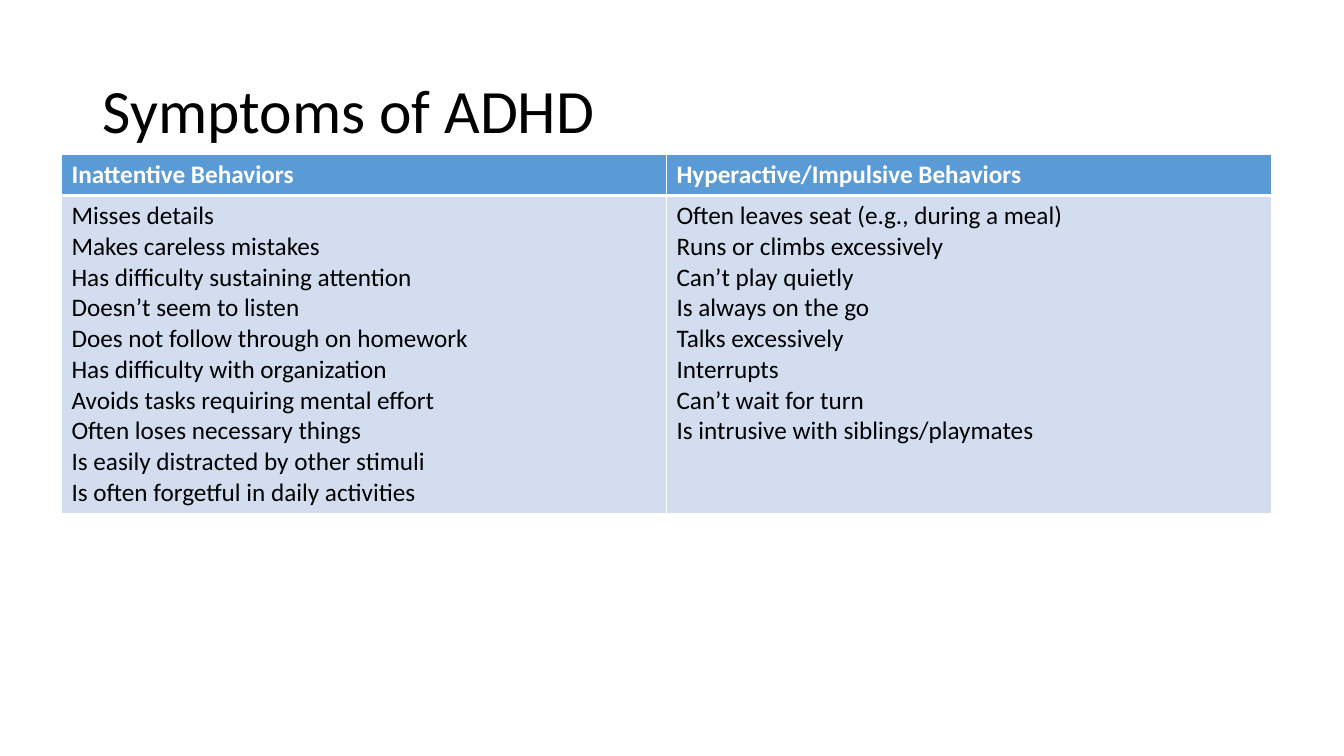
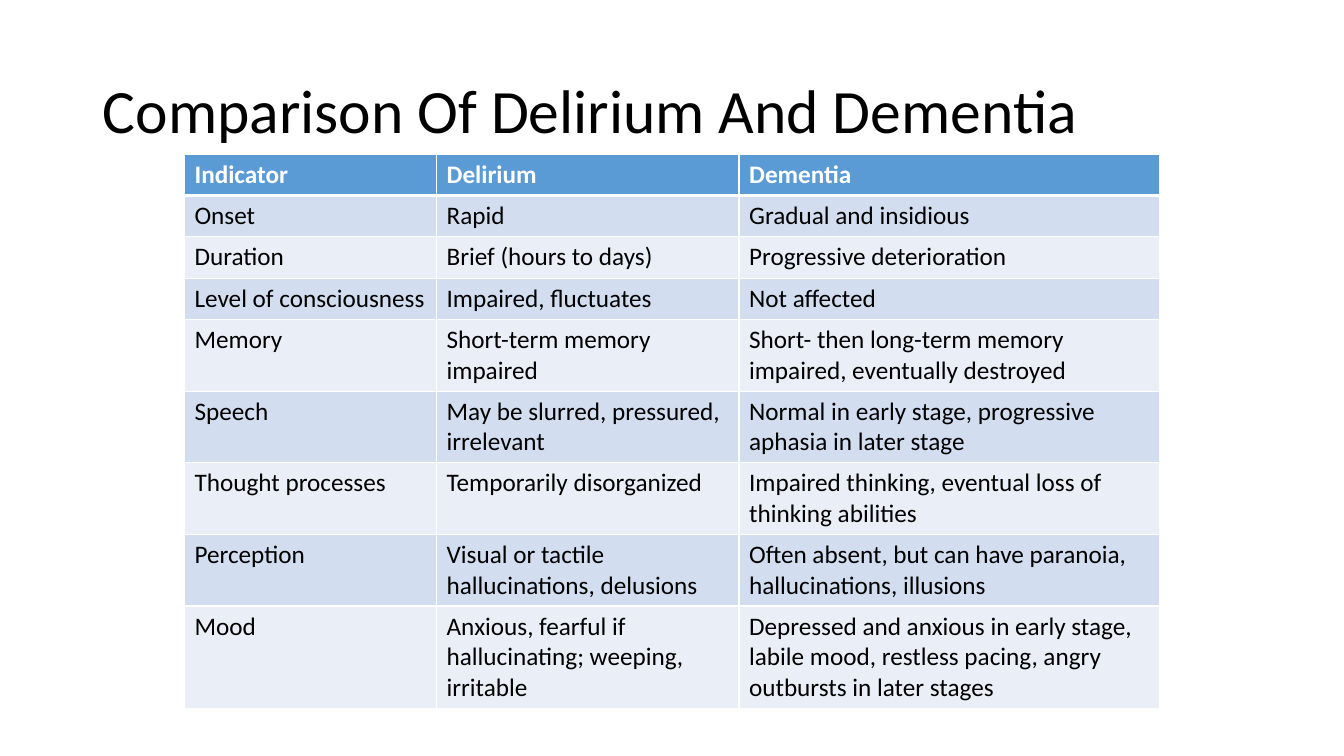
"""Build two slides that compare symptoms in tables."""
import pptx
import pptx.dml.color
import pptx.enum.text
import pptx.oxml
import pptx.oxml.ns
import pptx.util

Inches = pptx.util.Inches
FONT = "Calibri"
BLACK, WHITE = "000000", "FFFFFF"
HEADER_FILL = "5B9BD5"
BAND_FILLS = ("D2DEEF", "EAEFF7")
TABLE_TOP = 1.53
ROW_HEIGHT = 0.41

INATTENTIVE = [
    "Misses details",
    "Makes careless mistakes",
    "Has difficulty sustaining attention",
    "Doesn’t seem to listen",
    "Does not follow through on homework",
    "Has difficulty with organization",
    "Avoids tasks requiring mental effort",
    "Often loses necessary things",
    "Is easily distracted by other stimuli",
    "Is often forgetful in daily activities",
]
HYPERACTIVE = [
    "Often leaves seat (e.g., during a meal)",
    "Runs or climbs excessively",
    "Can’t play quietly",
    "Is always on the go",
    "Talks excessively",
    "Interrupts",
    "Can’t wait for turn",
    "Is intrusive with siblings/playmates",
]
ADHD_ROWS = [
    ("Inattentive Behaviors", "Hyperactive/Impulsive Behaviors"),
    ("\n".join(INATTENTIVE), "\n".join(HYPERACTIVE)),
]
DELIRIUM_ROWS = [
    ("Indicator", "Delirium", "Dementia"),
    ("Onset", "Rapid", "Gradual and insidious"),
    ("Duration", "Brief (hours to days)", "Progressive deterioration"),
    ("Level of consciousness", "Impaired, fluctuates", "Not affected"),
    ("Memory", "Short-term memory impaired",
     "Short- then long-term memory impaired, eventually destroyed"),
    ("Speech", "May be slurred, pressured, irrelevant",
     "Normal in early stage, progressive aphasia in later stage"),
    ("Thought processes", "Temporarily disorganized",
     "Impaired thinking, eventual loss of thinking abilities"),
    ("Perception", "Visual or tactile hallucinations, delusions",
     "Often absent, but can have paranoia, hallucinations, illusions"),
    ("Mood", "Anxious, fearful if hallucinating; weeping,\nirritable",
     "Depressed and anxious in early stage, labile mood, restless pacing, "
     "angry outbursts in later stages"),
]


def color(hex_text):
    """Return the colour for a hex string."""
    return pptx.dml.color.RGBColor.from_string(hex_text)


def format_text(text_frame, size, font_color, bold=False):
    """Format every run of a text frame."""
    for paragraph in text_frame.paragraphs:
        for run in paragraph.runs:
            run.font.name = FONT
            run.font.size = pptx.util.Pt(size)
            run.font.bold = bold
            run.font.color.rgb = color(font_color)


def set_borders(cell, bottom_width):
    """Draw white borders round a cell, with its own bottom width in points."""
    properties = cell._tc.get_or_add_tcPr()
    widths = {"lnL": 1, "lnR": 1, "lnT": 1, "lnB": bottom_width}
    for position, (tag, width) in enumerate(widths.items()):
        line = pptx.oxml.parse_xml(
            f'<a:{tag} {pptx.oxml.ns.nsdecls("a")} w="{pptx.util.Pt(width)}">'
            f'<a:solidFill><a:srgbClr val="{WHITE}"/></a:solidFill></a:{tag}>')
        properties.insert(position, line)


def add_titled_slide(presentation, title):
    """Add a title-only slide and style its title."""
    slide = presentation.slides.add_slide(presentation.slide_layouts[5])
    shape = slide.shapes.title
    shape.left, shape.top = Inches(0.92), Inches(0.4)
    shape.width, shape.height = Inches(11.5), Inches(1.45)
    text_frame = shape.text_frame
    text_frame.text = title
    text_frame.word_wrap = True
    text_frame.auto_size = pptx.enum.text.MSO_AUTO_SIZE.NONE
    text_frame.vertical_anchor = pptx.enum.text.MSO_ANCHOR.MIDDLE
    paragraph = text_frame.paragraphs[0]
    paragraph.alignment = pptx.enum.text.PP_ALIGN.LEFT
    paragraph.line_spacing = 0.9
    format_text(text_frame, 44, BLACK)
    return slide


def add_banded_table(slide, left, column_widths, rows):
    """Add a table with a header row and banded body rows."""
    table = slide.shapes.add_table(
        len(rows), len(column_widths), Inches(left), Inches(TABLE_TOP),
        Inches(sum(column_widths)), Inches(ROW_HEIGHT * len(rows))).table
    for column, width in zip(table.columns, column_widths):
        column.width = Inches(width)
    for row_index, texts in enumerate(rows):
        header = row_index == 0
        fill = HEADER_FILL if header else BAND_FILLS[(row_index - 1) % 2]
        for column_index, text in enumerate(texts):
            cell = table.cell(row_index, column_index)
            cell.text_frame.text = text
            format_text(cell.text_frame, 18, WHITE if header else BLACK, header)
            cell.fill.solid()
            cell.fill.fore_color.rgb = color(fill)
            set_borders(cell, 3 if header else 1)


def main():
    """Build and save the presentation."""
    presentation = pptx.Presentation()
    presentation.slide_width = Inches(13.33)
    presentation.slide_height = Inches(7.5)
    slide = add_titled_slide(presentation, "Symptoms of ADHD")
    add_banded_table(slide, 0.61, (6, 6), ADHD_ROWS)
    slide = add_titled_slide(presentation, "Comparison Of Delirium And Dementia")
    add_banded_table(slide, 1.83, (2.5, 3, 4.17), DELIRIUM_ROWS)
    presentation.save("out.pptx")


if __name__ == "__main__":
    main()
